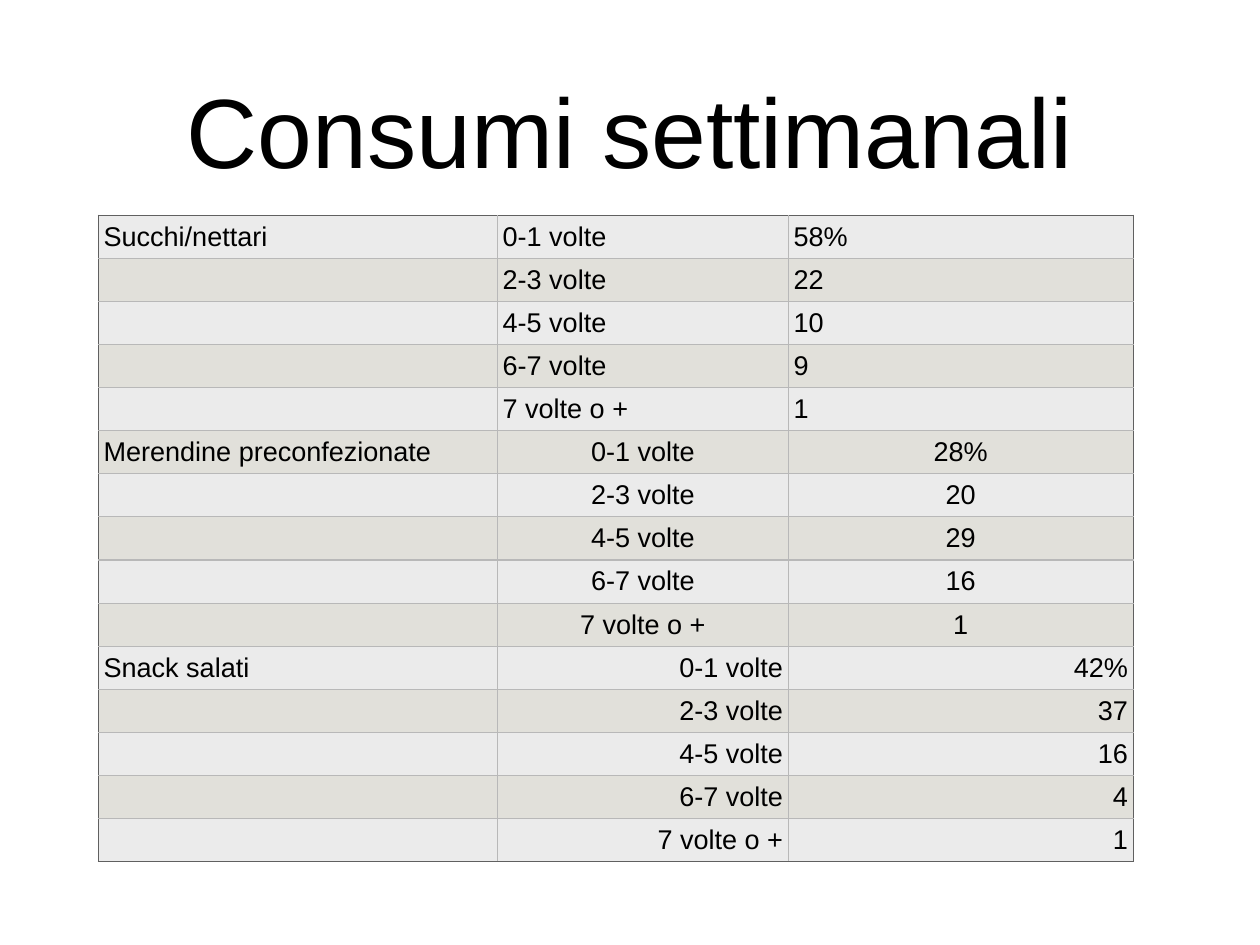
from lxml.etree import SubElement
from pptx import Presentation
from pptx.dml.color import RGBColor
from pptx.enum.text import MSO_ANCHOR as Anchor, PP_ALIGN as Align
from pptx.oxml.ns import qn
from pptx.util import Inches, Pt

INSET = Inches(0.06)
BANDS = ("EBEBEB", "E1E0DA")
OUTER, INNER = "606060", "B8B8B8"
COLUMN_WIDTHS = (4.5, 3.28, 3.89)
FREQUENCIES = ("0-1 volte", "2-3 volte", "4-5 volte", "6-7 volte", "7 volte o +")
FOODS = (
    ("Succhi/nettari", Align.LEFT, ("58%", "22", "10", "9", "1")),
    ("Merendine preconfezionate", Align.CENTER, ("28%", "20", "29", "16", "1")),
    ("Snack salati", Align.RIGHT, ("42%", "37", "16", "4", "1")),
)


def color(hex_string):
    return RGBColor.from_string(hex_string)


def set_text(paragraph, text, size, align):
    paragraph.text = text
    paragraph.alignment = align
    paragraph.font.name = "Arial"
    paragraph.font.size = Pt(size)
    paragraph.font.color.rgb = color("000000")


def set_insets(holder):
    holder.margin_left = holder.margin_right = INSET
    holder.margin_top = holder.margin_bottom = INSET
    holder.vertical_anchor = Anchor.MIDDLE


def set_borders(cell, left, right, top, bottom):
    properties = cell._tc.get_or_add_tcPr()
    sides = {"L": left, "R": right, "T": top, "B": bottom}
    for position, (side, hex_string) in enumerate(sides.items()):
        line = SubElement(properties, qn(f"a:ln{side}"), w=str(Pt(1)))
        fill = SubElement(line, qn("a:solidFill"))
        SubElement(fill, qn("a:srgbClr"), val=hex_string)
        properties.insert(position, line)


def add_title(slide, left, top, width, height):
    frame = slide.shapes.add_textbox(left, top, width, height).text_frame
    frame.word_wrap = True
    set_insets(frame)
    set_text(frame.paragraphs[0], "Consumi settimanali", 80, Align.CENTER)


def add_consumption_table(slide, left, top, width, height):
    rows = [
        (food if index == 0 else "", frequency, share, align)
        for food, align, shares in FOODS
        for index, (frequency, share) in enumerate(zip(FREQUENCIES, shares))
    ]
    last_row, last_column = len(rows) - 1, len(COLUMN_WIDTHS) - 1
    table = slide.shapes.add_table(
        len(rows), len(COLUMN_WIDTHS), left, top, width, height
    ).table
    table.first_row = table.horz_banding = False
    for column, share in zip(table.columns, COLUMN_WIDTHS):
        column.width = int(width * share / sum(COLUMN_WIDTHS))

    for r, (*texts, align) in enumerate(rows):
        for c, text in enumerate(texts):
            cell = table.cell(r, c)
            set_insets(cell)
            set_text(cell.text_frame.paragraphs[0], text, 22, align if c else Align.LEFT)
            cell.fill.solid()
            cell.fill.fore_color.rgb = color(BANDS[r % 2])
            edges = (c == 0, c == last_column, r == 0, r == last_row)
            set_borders(cell, *(OUTER if edge else INNER for edge in edges))


def main():
    deck = Presentation()
    deck.slide_width, deck.slide_height = Inches(14.22), Inches(10.67)
    slide = deck.slides.add_slide(deck.slide_layouts[6])
    add_title(slide, Inches(1.04), Inches(0.28), Inches(12.14), Inches(2.36))
    add_consumption_table(slide, Inches(1.11), Inches(2.43), Inches(11.68), Inches(7.17))
    deck.save("out.pptx")


if __name__ == "__main__":
    main()
